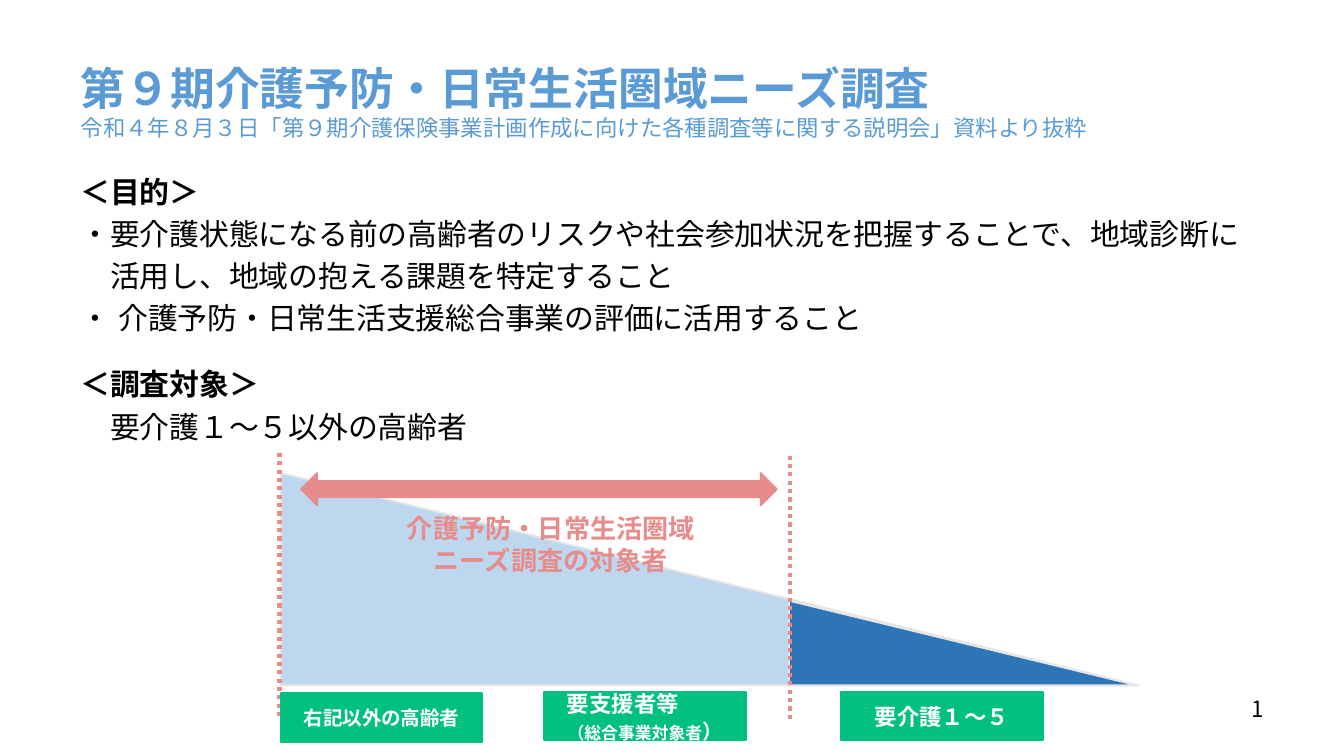
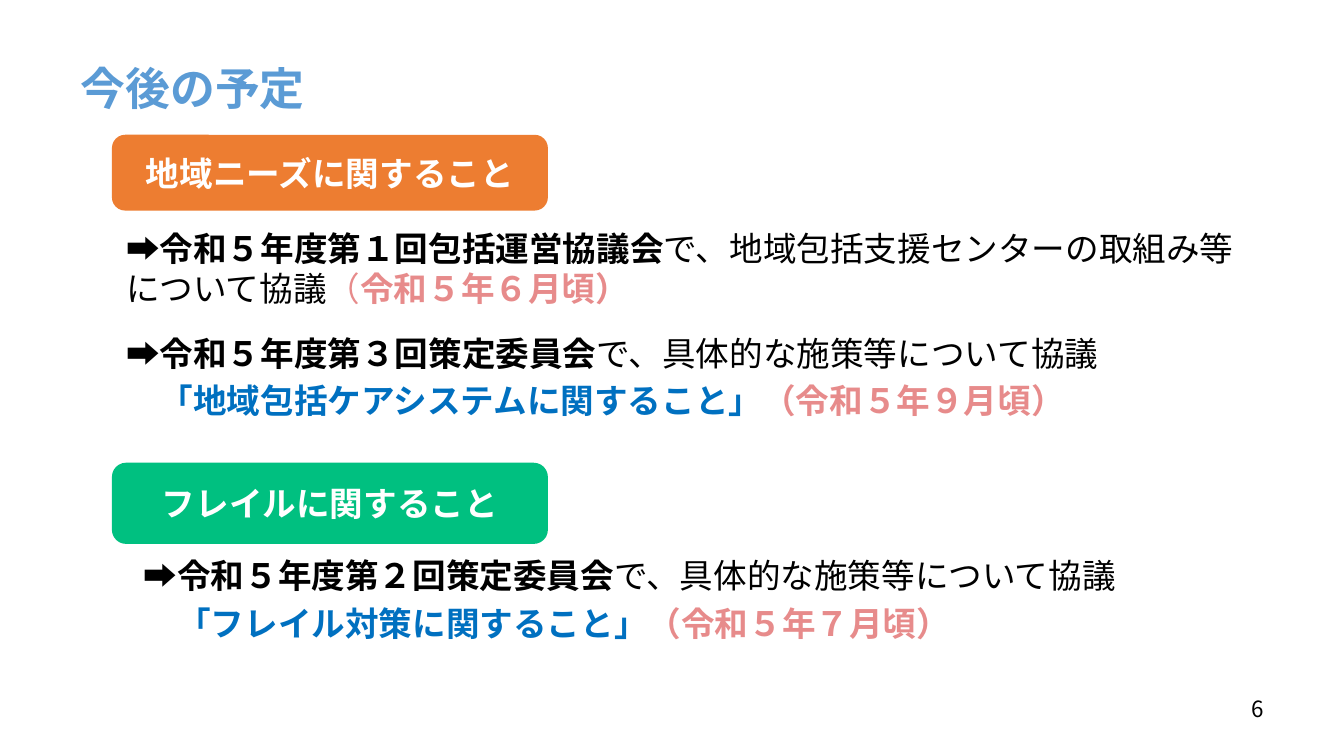
from lxml import etree
from pptx import Presentation
from pptx.dml.color import RGBColor
from pptx.enum import dml, shapes, text
from pptx.oxml import ns
from pptx.util import Inches, Pt

BLUE, PINK, GREEN, ORANGE = "5B9BD5", "E78B8B", "00C080", "ED7D31"
PALE, NAVY, GREY, LINK = "BDD7EE", "2E75B6", "E7E6E6", "0070C0"
BLACK, WHITE = "000000", "FFFFFF"
HEADING_FONT, LABEL_FONT = "Arial", "Noto Sans CJK JP"
LEFT, CENTER, RIGHT = text.PP_ALIGN.LEFT, text.PP_ALIGN.CENTER, text.PP_ALIGN.RIGHT
SHAPE = shapes.MSO_SHAPE

# A paragraph is (runs, paragraph format); a run is (words, run format).
TITLE = {"size": 24, "color": BLUE, "bold": True}
SUBTITLE = {"size": 12, "color": BLUE}
BODY, BODY_BOLD = {"size": 16}, {"size": 16, "bold": True}
PLAN, PLAN_BOLD = {"size": 18}, {"size": 18, "bold": True}
TOPIC = {"size": 18, "bold": True, "color": LINK}
DATE = {"size": 18, "bold": True, "color": PINK}
BODY_LINE = {"line_spacing": Pt(19.3), "space_before": Pt(3.2)}
PLAN_LINE = {"line_spacing": Pt(21.8), "space_before": Pt(3.6)}

SURVEY_TITLE = [
    ([("第９期介護予防・日常生活圏域ニーズ調査", TITLE)], {}),
    ([("令和４年８月３日「第９期介護保険事業計画作成に向けた各種調査等に関する説明会」資料より抜粋", SUBTITLE)], {}),
]
SCHEDULE_TITLE = [([("今後の予定", TITLE)], {})]

SURVEY_BODY = [
    ([("＜目的＞", BODY_BOLD)], {"line_spacing": Pt(19.3)}),
    ([("・要介護状態になる前の高齢者のリスクや社会参加状況を把握することで、地域診断に", BODY)], BODY_LINE),
    ([("　活用し、地域の抱える課題を特定すること", BODY)], BODY_LINE),
    ([("・ 介護予防・日常生活支援総合事業の評価に活用すること", BODY)], BODY_LINE),
    ([("＜調査対象＞", BODY_BOLD)], BODY_LINE | {"space_before": Pt(16.4)}),
    ([("　要介護１～５以外の高齢者", BODY)], BODY_LINE),
]
WEDGES = [((2.09, 3.52, 6.38, 1.58), PALE), ((5.87, 4.47, 2.59, 0.63), NAVY)]
BOUNDARIES = [(2.08, 3.37, 5.33), (5.88, 3.39, 5.36)]
TARGET_NAME = "介護予防・日常生活圏域ニーズ調査の対象者"


def label(words, size):
    return [([(words, {"size": size, "bold": True, "color": WHITE})], {"alignment": CENTER})]


SUPPORT_LABEL = [
    ([("要支援者等", {"size": 12, "bold": True, "color": WHITE})],
     {"alignment": LEFT, "line_spacing": Pt(15), "indent": 0.07}),
    ([("（総合事業対象者", {"size": 9, "bold": True, "color": WHITE}),
      ("）", {"size": 11, "bold": True, "color": WHITE})],
     {"alignment": CENTER, "line_spacing": Pt(14)}),
]
GROUPS = [
    (2.09, 5.16, label("右記以外の高齢者", 10.5)),
    (4.05, 5.15, SUPPORT_LABEL),
    (6.26, 5.15, label("要介護１～５", 12)),
]

HEADERS = [
    ((0.84, 1.01, 3.23, 0.55), ORANGE, "地域ニーズに関すること"),
    ((0.84, 3.45, 3.23, 0.59), GREEN, "フレイルに関すること"),
]
PLANS = [
    ((0.84, 1.64, 8.6, 1.65), [
        ([("➡令和５年度第１回包括運営協議会", PLAN_BOLD),
          ("で、地域包括支援センターの取組み等について協議", PLAN),
          ("（", {"size": 18, "color": PINK}), ("令和５年６月頃）", DATE)],
         {"line_spacing": Pt(21.8)}),
        ([("➡令和５年度第３回策定委員会", PLAN_BOLD),
          ("で、具体的な施策等について協議", PLAN)],
         PLAN_LINE | {"space_before": Pt(12.8)}),
        ([("　", PLAN), ("「地域包括ケアシステムに関すること」", TOPIC),
          ("（令和５年９月頃）", DATE)], PLAN_LINE),
    ]),
    ((0.97, 4.08, 7.95, 0.94), [
        ([("➡令和５年度第２回策定委員会", PLAN_BOLD),
          ("で、具体的な施策等について協議", PLAN)], {"line_spacing": Pt(21.8)}),
        ([("　「フレイル対策に関すること」", TOPIC), ("（令和５年７月頃）", DATE)], PLAN_LINE),
    ]),
]


def rgb(value):
    return RGBColor.from_string(value)


def write(frame, paragraphs, font_name, anchor=text.MSO_ANCHOR.TOP):
    frame.word_wrap = True
    frame.auto_size = text.MSO_AUTO_SIZE.NONE
    frame.vertical_anchor = anchor
    for index, (runs, layout) in enumerate(paragraphs):
        paragraph = frame.add_paragraph() if index else frame.paragraphs[0]
        for name, value in ({"alignment": LEFT} | layout).items():
            if name == "indent":
                paragraph._p.get_or_add_pPr().set("marL", str(Inches(value)))
            else:
                setattr(paragraph, name, value)
        for words, style in runs:
            run = paragraph.add_run()
            run.text = words
            font = run.font
            values = {"name": font_name, "size": Pt(style["size"]), "bold": style.get("bold", False)}
            for name, value in values.items():
                setattr(font, name, value)
            font.color.rgb = rgb(style.get("color", BLACK))
            properties = run._r.get_or_add_rPr()
            properties.set("lang", "ja-JP")
            etree.SubElement(properties, ns.qn("a:ea")).set("typeface", font_name)


def add_text(slide, box, paragraphs, font_name, anchor=text.MSO_ANCHOR.TOP):
    frame = slide.shapes.add_textbox(*map(Inches, box)).text_frame
    write(frame, paragraphs, font_name, anchor)


def add_block(slide, kind, box, fill, line=None, paragraphs=()):
    shape = slide.shapes.add_shape(kind, *map(Inches, box))
    shape.shadow.inherit = False
    shape.fill.solid()
    shape.fill.fore_color.rgb = rgb(fill)
    shape.line.color.rgb = rgb(line or fill)
    shape.line.width = Pt(1)
    if paragraphs:
        write(shape.text_frame, paragraphs, LABEL_FONT, text.MSO_ANCHOR.MIDDLE)


def add_boundary(slide, x, top, bottom):
    line = slide.shapes.add_connector(
        shapes.MSO_CONNECTOR.STRAIGHT, *map(Inches, (x, top, x, bottom)))
    line.line.color.rgb = rgb(PINK)
    line.line.width = Pt(2.25)
    line.line.dash_style = dml.MSO_LINE.ROUND_DOT
    etree.SubElement(line._element.spPr, ns.qn("a:effectLst"))


def add_slide(presentation, title_paragraphs, number):
    """Add a slide with its title and page number."""
    slide = presentation.slides.add_slide(presentation.slide_layouts[5])
    title = slide.shapes.title
    for name, value in zip(("left", "top", "width", "height"), (0.5, 0.34, 9, 0.82)):
        setattr(title, name, Inches(value))
    title.text_frame.margin_top = Inches(0.11)
    write(title.text_frame, title_paragraphs, HEADING_FONT)
    add_text(slide, (7.4, 5.12, 2.1, 0.3),
             [([(str(number), {"size": 12})], {"alignment": RIGHT})],
             LABEL_FONT, text.MSO_ANCHOR.MIDDLE)
    return slide


def build_survey(presentation):
    slide = add_slide(presentation, SURVEY_TITLE, 1)
    add_text(slide, (0.5, 1.24, 9, 2.12), SURVEY_BODY, HEADING_FONT)
    for box, fill in WEDGES:
        add_block(slide, SHAPE.RIGHT_TRIANGLE, box, fill, GREY)
    for boundary in BOUNDARIES:
        add_boundary(slide, *boundary)
    for left, top, paragraphs in GROUPS:
        add_block(slide, SHAPE.RECTANGLE, (left, top, 1.5, 0.36), GREEN, paragraphs=paragraphs)
    add_block(slide, SHAPE.LEFT_RIGHT_ARROW, (2.24, 3.52, 3.54, 0.24), PINK)
    target = [([(TARGET_NAME, {"size": 14, "bold": True, "color": PINK})],
               {"alignment": CENTER, "line_spacing": Pt(17)})]
    add_text(slide, (2.84, 3.76, 2.52, 0.57), target, LABEL_FONT)


def build_schedule(presentation):
    slide = add_slide(presentation, SCHEDULE_TITLE, 6)
    for box, fill, words in HEADERS:
        add_block(slide, SHAPE.ROUNDED_RECTANGLE, box, fill, paragraphs=label(words, 18))
    for box, paragraphs in PLANS:
        add_text(slide, box, paragraphs, HEADING_FONT)


def main():
    presentation = Presentation()
    presentation.slide_width = Inches(10)
    presentation.slide_height = Inches(10 * 9 / 16)
    build_survey(presentation)
    build_schedule(presentation)
    presentation.save("out.pptx")


if __name__ == "__main__":
    main()
